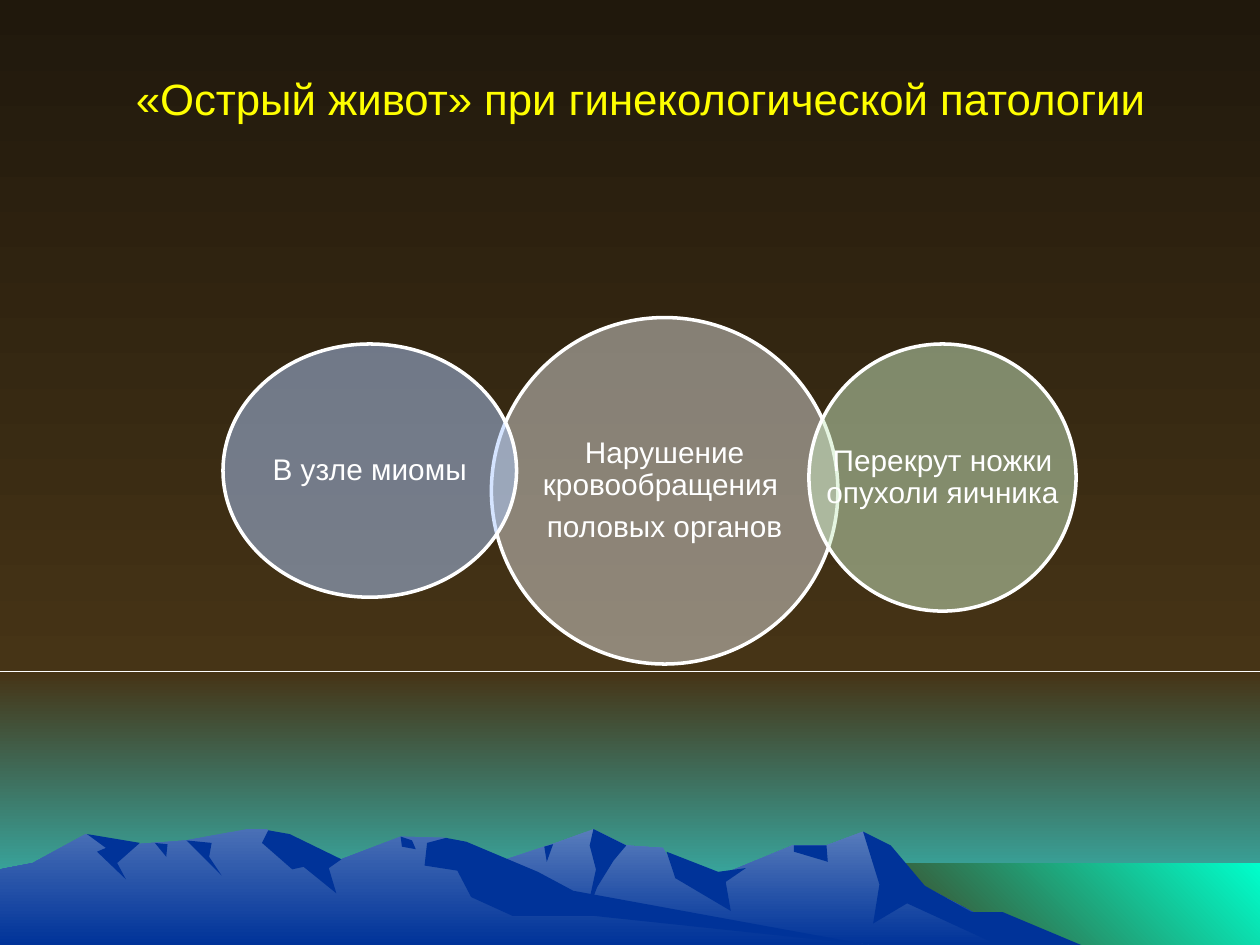
from lxml import etree
from pptx import Presentation, util as u
from pptx.dml import color
from pptx.enum import shapes, text
from pptx.oxml import ns

COLUMNS, ROWS = 1000, 750
CELL = u.Inches(10) // COLUMNS
HORIZON, GLOW_LEFT, GLOW_TOP = 533, 683, 685
NAVY, WHITE, EARTH = "003399", "FFFFFF", "463416"
DOWN, UP_RIGHT = 270, 45

BACKDROP = [
    (0, HORIZON, EARTH, "33CCCC", DOWN),
    (0, 0, "20180C", EARTH, DOWN),
    (GLOW_LEFT, GLOW_TOP, EARTH, "00FFCC", UP_RIGHT),
]

FAR_RIDGE = [(258, ROWS), (327, 709), (405, 681), (444, 668), (471, 658), (497, 671),
             (526, 673), (536, 690), (566, 697), (629, 671), (656, 671), (685, 660),
             (702, 671), (723, 698), (778, 727), (821, ROWS)]
NEAR_RIDGE = [(0, ROWS), (0, 690), (26, 685), (68, 662), (94, 671), (148, 667),
              (196, 658), (212, 658), (236, 681), (271, 682), (318, 664), (354, 665),
              (432, 712), (690, ROWS)]
FAR_SHADOWS = [
    [(685, 660), (707, 671), (734, 703), (771, 724), (796, 724), (858, ROWS), (792, ROWS),
     (720, 717), (693, 733), (698, 702)],
    [(471, 658), (497, 671), (487, 683), (474, 704), (465, 727), (473, 690), (468, 671)],
    [(529, 676), (570, 692), (592, 689), (576, 700), (580, 723), (536, 697)],
    [(630, 671), (656, 671), (657, 684), (630, 676)],
    [(432, 672), (439, 670), (434, 684)],
]
NEAR_SHADOWS = [
    [(213, 659), (230, 662), (271, 682), (261, 689), (267, 709), (241, 688), (232, 690),
     (208, 669)],
    [(339, 669), (354, 665), (370, 668), (427, 692), (455, 707), (690, ROWS), (472, 727),
     (407, 727), (374, 712), (363, 691), (337, 687)],
    [(318, 664), (327, 667), (330, 674), (319, 672)],
    [(148, 667), (168, 669), (166, 680), (176, 695)],
    [(123, 669), (133, 670), (132, 680)],
    [(69, 662), (111, 669), (93, 685), (100, 698), (77, 676), (84, 673)],
]

CAUSES = [
    ((390, 252, 275, 275), "DADADA", ["Нарушение кровообращения ", "половых органов"]),
    ((642, 273, 212, 212), "CCECC5", ["Перекрут ножки опухоли яичника"]),
    ((177, 273, 233, 201), "ADCBFF", ["В узле миомы"]),
]
MARGINS = ("margin_left", "margin_right", "margin_top", "margin_bottom")
CAUSE_FRAME = {"vertical_anchor": text.MSO_ANCHOR.MIDDLE,
               **dict.fromkeys(MARGINS, u.Inches(0.02))}
CAUSE_PARAGRAPH = {"alignment": text.PP_ALIGN.CENTER, "line_spacing": 0.9,
                   "space_after": u.Pt(6)}


def rgb(hex_color):
    """Turn a hex string into a colour."""
    return color.RGBColor.from_string(hex_color)


def apply(target, values):
    """Set each named format value on the target."""
    for name, value in values.items():
        setattr(target, name, value)


def place(box):
    """Convert a box in grid columns and rows to slide lengths."""
    return [cells * CELL for cells in box]


def paint_solid(shape, hex_color):
    """Fill a shape with one colour."""
    shape.shadow.inherit = False
    shape.fill.solid()
    shape.fill.fore_color.rgb = rgb(hex_color)


def paint_gradient(shape, start, end, angle):
    """Fill a shape with a two-colour gradient."""
    shape.shadow.inherit = False
    shape.fill.gradient()
    shape.fill.gradient_angle = angle
    for stop, hex_color in zip(shape.fill.gradient_stops, (start, end)):
        stop.color.rgb = rgb(hex_color)


def add_band(slide, left, top, start, end, angle):
    """Add a backdrop band that reaches the right edge and the next band."""
    bottom = ROWS if top else HORIZON
    box = place((left, top, COLUMNS - left, bottom - top))
    band = slide.shapes.add_shape(shapes.MSO_SHAPE.RECTANGLE, *box)
    paint_gradient(band, start, end, angle)
    band.line.fill.background()


def add_outline(slide, points):
    """Add a borderless closed outline given in grid points."""
    builder = slide.shapes.build_freeform(*points[0], scale=CELL)
    builder.add_line_segments(points[1:], close=True)
    outline = builder.convert_to_shape()
    outline.line.fill.background()
    return outline


def add_range(slide, ridge, haze, shadows):
    """Add a mountain ridge with its shaded slopes."""
    paint_gradient(add_outline(slide, ridge), haze, NAVY, DOWN)
    for slope in shadows:
        paint_solid(add_outline(slide, slope), NAVY)


def add_text(slide, box, lines, size, hex_color, frame_format, paragraph_format):
    """Add a wrapping text box with one paragraph per line."""
    frame = slide.shapes.add_textbox(*place(box)).text_frame
    apply(frame, {"word_wrap": True, **frame_format})
    frame.text = "\n".join(lines)
    for paragraph in frame.paragraphs:
        apply(paragraph, paragraph_format)
        apply(paragraph.font, {"name": "Arial", "size": u.Pt(size)})
        paragraph.font.color.rgb = rgb(hex_color)


def add_cause(slide, box, hex_color, lines):
    """Add a half-transparent circle with its label."""
    circle = slide.shapes.add_shape(shapes.MSO_SHAPE.OVAL, *place(box))
    paint_solid(circle, hex_color)
    tint = circle.element.spPr.find(ns.qn("a:solidFill")).find(ns.qn("a:srgbClr"))
    etree.SubElement(tint, ns.qn("a:alpha"), val="50000")
    circle.line.color.rgb = rgb(WHITE)
    circle.line.width = u.Pt(2)
    add_text(slide, box, lines, 17, WHITE, CAUSE_FRAME, CAUSE_PARAGRAPH)


def main():
    """Build the slide and save it."""
    deck = Presentation()
    apply(deck, {"slide_width": COLUMNS * CELL, "slide_height": ROWS * CELL})
    slide = deck.slides.add_slide(deck.slide_layouts[6])
    for band in BACKDROP:
        add_band(slide, *band)
    add_range(slide, FAR_RIDGE, "597DBC", FAR_SHADOWS)
    add_range(slide, NEAR_RIDGE, "4A70B6", NEAR_SHADOWS)
    add_text(slide, (98, 52, 850, 52), ["«Острый живот» при гинекологической патологии"],
             25, "FFFF00", {}, {})
    for cause in CAUSES:
        add_cause(slide, *cause)
    deck.save("out.pptx")


if __name__ == "__main__":
    main()
